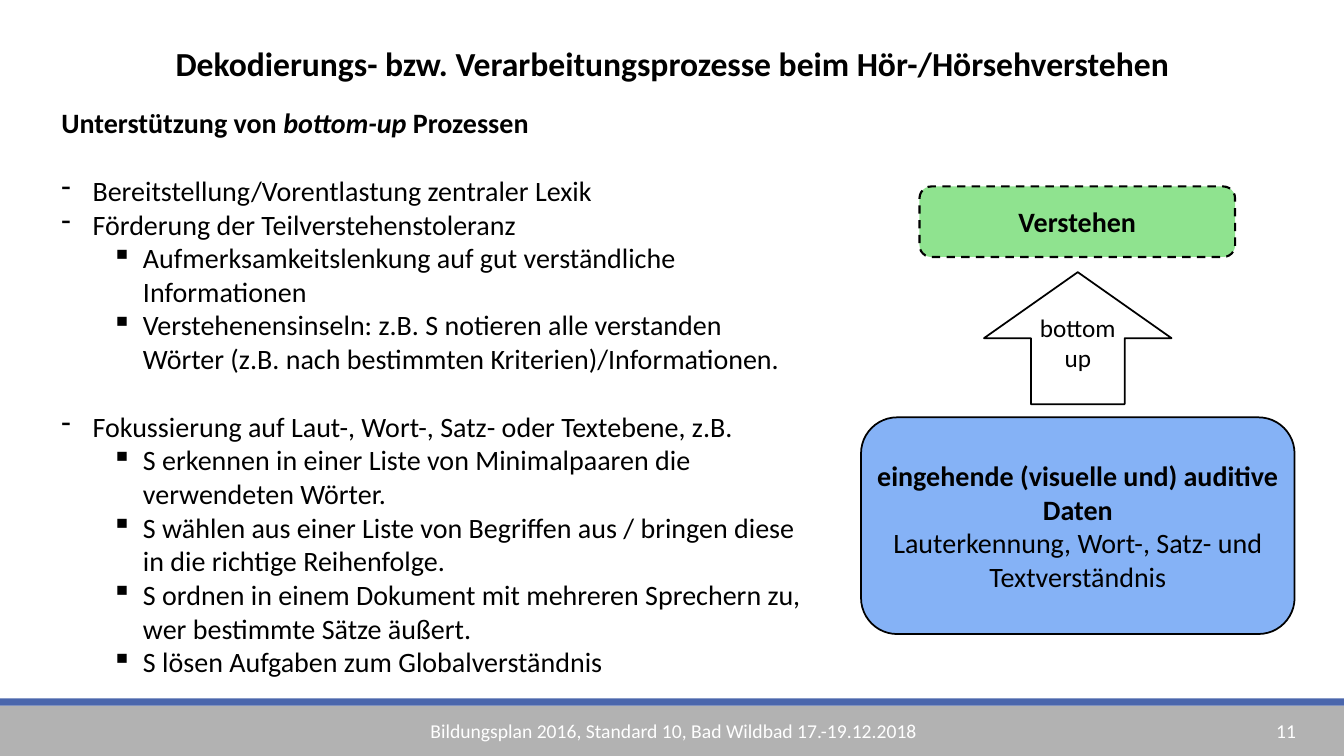
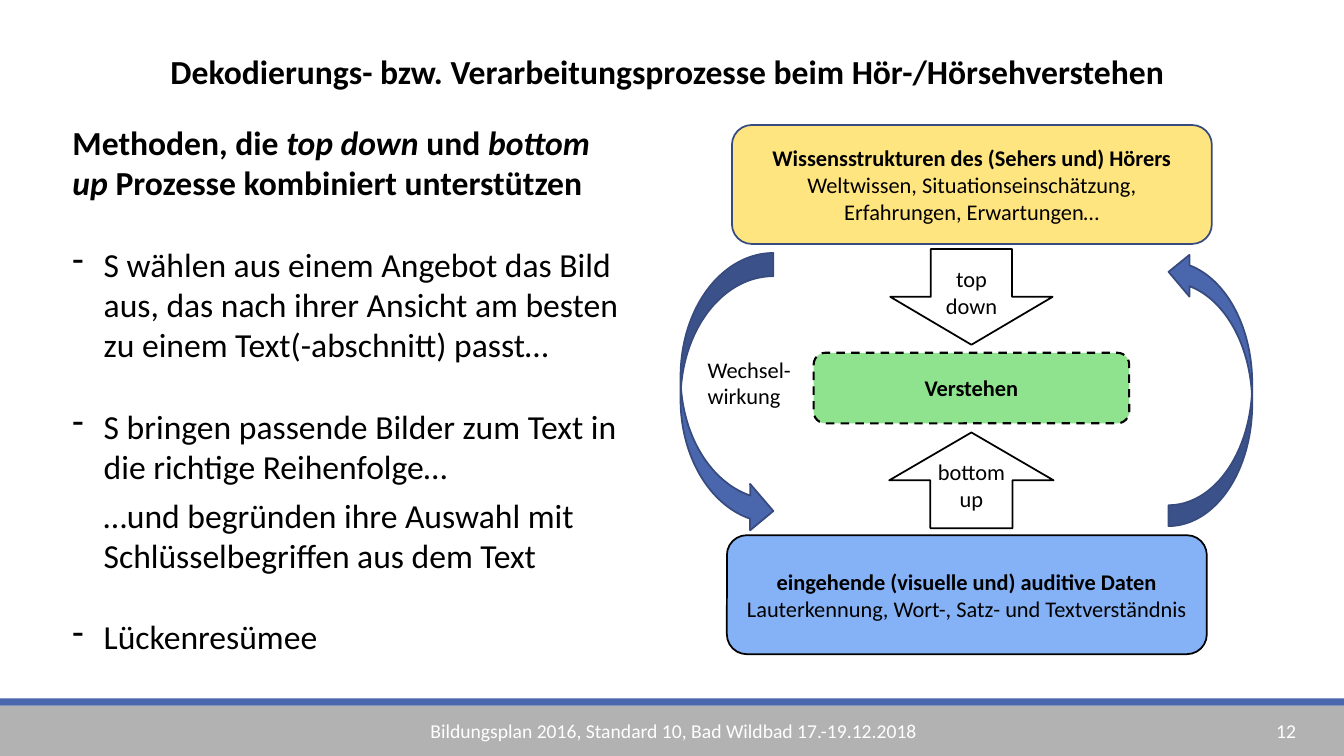
import pptx
import pptx.dml.color
import pptx.enum.dml
import pptx.enum.shapes
import pptx.enum.text
import pptx.oxml.ns
import pptx.util
import lxml.etree

Inches = pptx.util.Inches
Pt = pptx.util.Pt
MSO = pptx.enum.shapes.MSO_SHAPE
ALIGN = pptx.enum.text.PP_ALIGN
ANCHOR = pptx.enum.text.MSO_ANCHOR

BLACK, WHITE, GREY = "000000", "FFFFFF", "B2B2B2"
BLUE, NAVY, LIGHT_BLUE = "4A66AC", "374B7F", "85B2F6"
GREEN, YELLOW = "33CC33", "FFCC00"
TITLE = "Dekodierungs- bzw. Verarbeitungsprozesse beim Hör-/Hörsehverstehen"
FOOTER = "Bildungsplan 2016, Standard 10, Bad Wildbad 17.-19.12.2018"
DATA = "eingehende (visuelle und) auditive Daten"
DATA_DETAIL = "Lauterkennung, Wort-, Satz- und Textverständnis"


def rgb(color):
    return pptx.dml.color.RGBColor.from_string(color)


def add_text(tf, text, size=20, color=BLACK, bold=False, align=ALIGN.LEFT,
             bullet=None, left=0, level=0, before=0, after=0):
    p = tf.paragraphs[0]
    if p.runs:
        p = tf.add_paragraph()
    p.alignment = align
    p.level = level
    p.space_before, p.space_after = Pt(before), Pt(after)
    pPr = p._p.get_or_add_pPr()
    pPr.set("marL", str(Inches(left)))
    pPr.set("indent", str(Inches(-0.31 if bullet else 0)))
    if bullet:
        bu = lxml.etree.SubElement(pPr, pptx.oxml.ns.qn("a:buChar"))
        bu.set("char", bullet)
    for i, part in enumerate(text.split("*")):
        r = p.add_run()
        r.text = part
        r.font.name, r.font.size = "Calibri", Pt(size)
        r.font.bold, r.font.italic = bold, i % 2 == 1
        r.font.color.rgb = rgb(color)


class Deck:
    """Holds the shared style and the current slide."""

    def __init__(self):
        self.prs = pptx.Presentation()
        self.prs.slide_width = Inches(13.33)
        self.prs.slide_height = Inches(7.5)
        self.s = None

    def slide(self, number, title_top):
        self.s = self.prs.slides.add_slide(self.prs.slide_layouts[6])
        self.shape(MSO.RECTANGLE, 0, 7, 13.33, 0.5, fill=GREY)
        self.shape(MSO.RECTANGLE, 0, 6.93, 13.33, 0.07, fill=BLUE)
        for text, left, width in ((FOOTER, 4.17, 5.53), (str(number), 12.56, 0.77)):
            add_text(self.box(left, 7.08, width, 0.34), text, size=14, color=WHITE)
        center = 6.67 if number == 11 else 6.62
        add_text(self.box(center - 5.5, title_top, 11, 0.5), TITLE,
                 size=24, bold=True, align=ALIGN.CENTER)

    def box(self, left, top, width, height):
        sp = self.s.shapes.add_textbox(*map(Inches, (left, top, width, height)))
        sp.text_frame.word_wrap = True
        return sp.text_frame

    def shape(self, kind, left, top, width, height, fill=None, line=None,
              weight=1.25, alpha=None, dashed=False):
        sp = self.s.shapes.add_shape(kind, *map(Inches, (left, top, width, height)))
        sp.shadow.inherit = False
        if fill:
            sp.fill.solid()
            sp.fill.fore_color.rgb = rgb(fill)
        else:
            sp.fill.background()
        if alpha:
            clr = sp._element.spPr.find(".//" + pptx.oxml.ns.qn("a:srgbClr"))
            tag = lxml.etree.SubElement(clr, pptx.oxml.ns.qn("a:alpha"))
            tag.set("val", str(alpha * 1000))
        if line:
            sp.line.color.rgb = rgb(line)
            sp.line.width = Pt(weight)
        else:
            sp.line.fill.background()
        if dashed:
            sp.line.dash_style = pptx.enum.dml.MSO_LINE.DASH
        return sp

    def label(self, sp, lines, size, bold_first=True, inset=0, lift=0):
        tf = sp.text_frame
        tf.word_wrap = True
        tf.vertical_anchor = ANCHOR.MIDDLE
        tf.margin_left = tf.margin_right = Inches(inset)
        tf.margin_top = Inches(max(-lift, 0))
        tf.margin_bottom = Inches(max(lift, 0))
        for i, text in enumerate(lines):
            add_text(tf, text, size=size, bold=bold_first and i == 0,
                     align=ALIGN.CENTER)

    def panel(self, left, top, width, height, lines, size, fill, line=BLACK,
              alpha=None, inset=0):
        sp = self.shape(MSO.ROUNDED_RECTANGLE, left, top, width, height,
                        fill, line, alpha=alpha)
        self.label(sp, lines, size, inset=inset)

    def goal(self, left, top, size):
        sp = self.shape(MSO.ROUNDED_RECTANGLE, left, top, 3.13, 0.7, GREEN, BLACK,
                        weight=1.5, alpha=55, dashed=True)
        self.label(sp, ["Verstehen"], size)

    def arrow(self, kind, left, top, width, height, lines, size, lift):
        sp = self.shape(kind, left, top, width, height, line=BLACK)
        self.label(sp, lines, size, bold_first=False, lift=lift)

    def curve(self, kind, left, top, width, height, flip=False):
        sp = self.shape(kind, left, top, width, height, BLUE, NAVY)
        if flip:
            sp._element.spPr.xfrm.set("flipV", "1")


def bottom_up_slide(deck):
    deck.slide(11, 0.38)
    tf = deck.box(0.51, 1, 7.59, 5.86)
    add_text(tf, "Unterstützung von *bottom-up* Prozessen", bold=True)
    groups = (
        ("Bereitstellung/Vorentlastung zentraler Lexik", 24.4, ()),
        ("Förderung der Teilverstehenstoleranz", 0, (
            "Aufmerksamkeitslenkung auf gut verständliche Informationen",
            "Verstehenensinseln: z.B. S notieren alle verstanden Wörter "
            "(z.B. nach bestimmten Kriterien)/Informationen.")),
        ("Fokussierung auf Laut-, Wort-, Satz- oder Textebene, z.B.", 24.4, (
            "S erkennen in einer Liste von Minimalpaaren die verwendeten Wörter.",
            "S wählen aus einer Liste von Begriffen aus / bringen diese in die "
            "richtige Reihenfolge.",
            "S ordnen in einem Dokument mit mehreren Sprechern zu, wer bestimmte "
            "Sätze äußert.",
            "S lösen Aufgaben zum Globalverständnis")),
    )
    for head, before, items in groups:
        add_text(tf, head, bullet="-", left=0.31, before=before)
        for item in items:
            add_text(tf, item, bullet="▪", left=0.81, level=1)

    deck.goal(9.12, 1.85, 20)
    deck.arrow(MSO.UP_ARROW, 9.76, 2.7, 1.86, 1.31, ["bottom", "up"], 18, 0.24)
    deck.panel(8.54, 4.14, 4.3, 2.15, [DATA, DATA_DETAIL], 20, LIGHT_BLUE)


def combined_slide(deck):
    deck.slide(12, 0.46)
    tf = deck.box(0.62, 1.16, 5.68, 5.6)
    add_text(tf, "Methoden, die *top down* und *bottom up *Prozesse kombiniert "
             "unterstützen", size=24, bold=True)
    for text, bullet, before in (
            ("S wählen aus einem Angebot das Bild aus, das nach ihrer Ansicht am "
             "besten zu einem Text(-abschnitt) passt…", "-", 29.3),
            ("S bringen passende Bilder zum Text in die richtige Reihenfolge…",
             "-", 29.3),
            ("…und begründen ihre Auswahl mit Schlüsselbegriffen aus dem Text",
             None, 6),
            ("Lückenresümee", "-", 29.3)):
        add_text(tf, text, size=24, bullet=bullet, left=0.31, before=before)

    deck.panel(7.26, 1.24, 4.76, 1.18,
               ["Wissensstrukturen des (Sehers und) Hörers",
                "Weltwissen, Situationseinschätzung, Erfahrungen, Erwartungen…"],
               16, YELLOW, line=NAVY, alpha=50, inset=0.2)
    deck.arrow(MSO.DOWN_ARROW, 8.83, 2.47, 1.61, 0.95, ["top", "down"], 16, -0.15)
    deck.goal(8.07, 3.5, 16)
    deck.arrow(MSO.UP_ARROW, 8.82, 4.29, 1.63, 0.95, ["bottom", "up"], 16, 0.15)
    deck.panel(7.21, 5.31, 4.76, 1.18, [DATA, DATA_DETAIL], 16, LIGHT_BLUE)
    deck.curve(MSO.CURVED_LEFT_ARROW, 11.59, 2.49, 0.83, 2.73, flip=True)
    deck.curve(MSO.CURVED_RIGHT_ARROW, 6.75, 2.51, 0.92, 2.79)
    tf = deck.box(6.92, 3.48, 1.04, 0.64)
    for text in ("Wechsel-", "wirkung"):
        add_text(tf, text, size=16)


def main():
    deck = Deck()
    bottom_up_slide(deck)
    combined_slide(deck)
    deck.prs.save("out.pptx")


if __name__ == "__main__":
    main()
